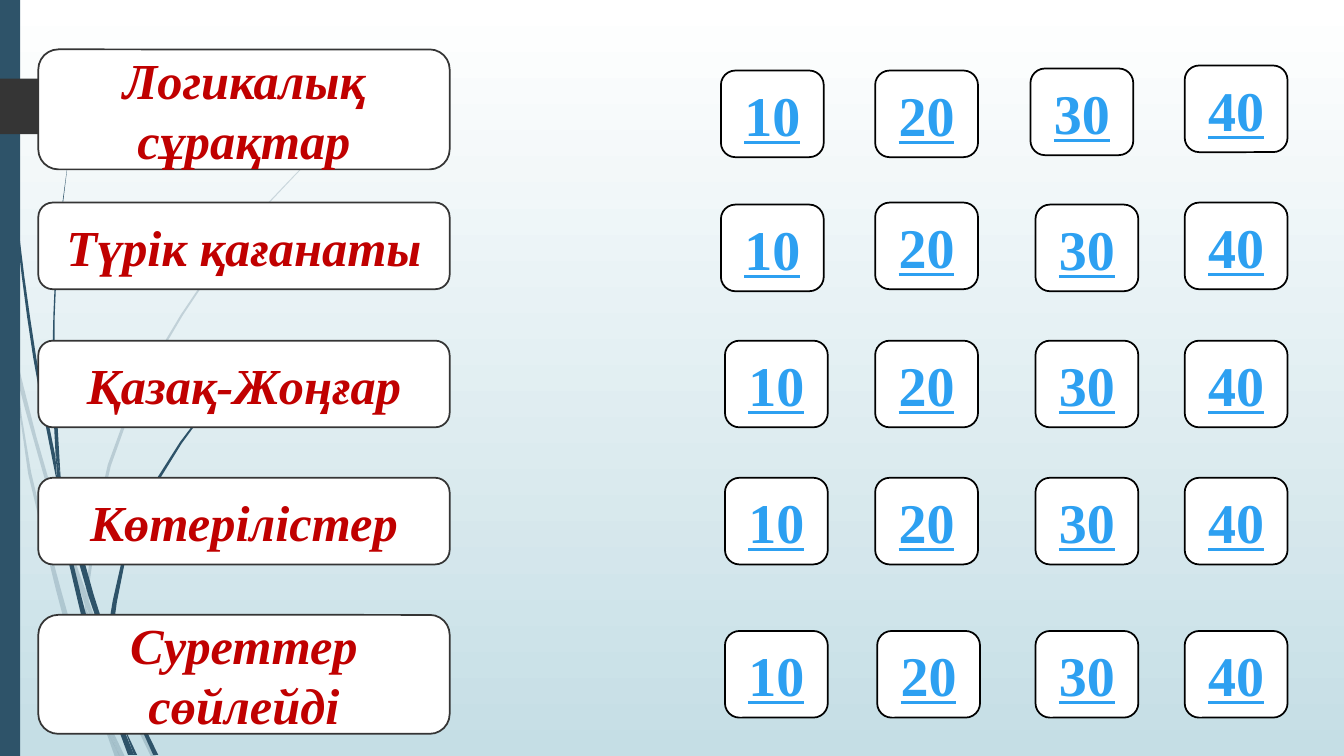
from math import dist

from lxml.etree import SubElement
from pptx import Presentation
from pptx.dml.color import RGBColor
from pptx.enum.shapes import MSO_SHAPE as Preset
from pptx.enum.text import MSO_ANCHOR, PP_ALIGN
from pptx.oxml.ns import qn
from pptx.util import Inches, Pt

COLORS = {
    "white": "FFFFFF", "mist": "C5DEE5", "stem": "2E5369", "charcoal": "353535",
    "topic": "C00000", "score": "2DA0F1", "black": "000000",
}
FONT = "Times New Roman"
WIDTH, HEIGHT = 13.33, 7.5

# Topic, top and height of its box, top of its score tiles
ROWS = [
    ("Логикалық сұрақтар", 0.49, 1.19, 0.7),
    ("Түрік қағанаты", 2.01, 0.86, 2.01),
    ("Қазақ-Жоңғар", 3.38, 0.86, 3.38),
    ("Көтерілістер", 4.74, 0.86, 4.74),
    ("Суреттер сөйлейді", 6.1, 1.18, 6.26),
]
SCORES = [("10", 7.19), ("20", 8.68), ("30", 10.27), ("40", 11.75)]
TILE_NUDGES = {  # (row, column): (right, down)
    (0, 0): (-0.04, 0), (0, 2): (-0.05, -0.02), (0, 3): (0, -0.05),
    (1, 0): (-0.04, 0.02), (1, 2): (0, 0.02), (4, 1): (0.02, 0),
}
TOPIC_LEFT, TOPIC_WIDTH = 0.38, 4.08
TILE_WIDTH, TILE_HEIGHT = 1.02, 0.86

# Each grass blade is an outline of two sides, in inches
PALE_BLADES = [
    ([(0.11, 3.5), (0, 2.82)], [(0, 2.99), (0.11, 3.5)]),
    ([(0.14, 3.45), (0.17, 3.76), (0.58, 5.22), (0.84, 5.99)],
     [(0.85, 5.86), (0.62, 5.2), (0.36, 4.33), (0.14, 3.45)]),
    ([(0.88, 5.96), (0.88, 6.1), (1.23, 6.94), (1.5, 7.51)],
     [(1.55, 7.51), (1.27, 6.92), (0.92, 6.07), (0.88, 5.96)]),
    ([(1.05, 7.11), (1.19, 7.51)], [(1.24, 7.51), (1.05, 7.11)]),
    ([(0.93, 6.83), (0.7, 6.19), (0.31, 4.69), (0.17, 3.76), (0.11, 3.5)],
     [(0.28, 4.7), (0.65, 6.21), (0.92, 6.93), (1.01, 7.14), (0.93, 6.83)]),
    ([(0.84, 5.99), (0.87, 6.46), (0.93, 6.83), (1.05, 7.11)],
     [(1.03, 7.06), (0.91, 6.46), (0.88, 6.1), (0.84, 5.99)]),
    ([(0.88, 5.96), (0.88, 5.84), (1.1, 4.62), (1.6, 3.49), (2.29, 2.45), (3.12, 1.54)],
     [(3.12, 1.53), (2.28, 2.44), (1.58, 3.48), (1.07, 4.61), (0.85, 5.84)]),
    ([(1.01, 7.14), (1.14, 7.51)], [(1.19, 7.51), (1.01, 7.14)]),
    ([(0.88, 6.08), (0.88, 5.96), (0.85, 5.86)], [(0.84, 5.99), (0.88, 6.08)]),
    ([(0.93, 6.83), (1.01, 7.14), (1.19, 7.51)], [(1.05, 7.11), (0.93, 6.83)]),
]
DARK_BLADES = [
    ([(0.03, 0), (0.07, 1.1), (0.17, 2.33), (0.33, 3.55), (0.57, 4.81)],
     [(0.55, 4.53), (0.36, 3.55), (0.19, 2.32), (0.08, 1.09), (0.04, 0)]),
    ([(0.6, 4.72), (0.64, 5.05), (0.88, 5.92), (1.06, 6.45)],
     [(1.06, 6.31), (0.93, 5.9), (0.6, 4.72)]),
    ([(1.1, 6.41), (1.11, 6.56), (1.52, 7.49)],
     [(1.57, 7.49), (1.36, 7.06), (1.1, 6.41)]),
    ([(1.1, 6.91), (0.98, 6.57), (0.72, 5.56), (0.57, 4.77)],
     [(0.68, 5.57), (0.93, 6.59), (1.17, 7.22), (1.1, 6.91)]),
    ([(0.6, 4.72), (0.54, 3.49), (0.58, 2.45), (0.7, 1.41)],
     [(0.56, 2.45), (0.52, 3.49), (0.55, 4.49), (0.6, 4.72)]),
    ([(1.22, 7.19), (1.33, 7.49)], [(1.36, 7.49), (1.22, 7.19)]),
    ([(0.57, 4.77), (0.64, 5.05)], [(0.6, 4.72), (0.55, 4.49)]),
    ([(1.1, 6.41), (1.11, 6.33), (1.25, 5.52), (1.58, 4.76), (2.05, 4.06), (2.61, 3.44)],
     [(2.6, 3.44), (2.04, 4.05), (1.56, 4.74), (1.22, 5.51), (1.06, 6.31)]),
    ([(1.17, 7.22), (1.27, 7.49)], [(1.31, 7.49), (1.17, 7.22)]),
    ([(1.1, 6.91), (1.17, 7.22), (1.3, 7.49)], [(1.33, 7.49), (1.1, 6.91)]),
]
STEPS_PER_INCH = 2.5


def color(name):
    return RGBColor.from_string(COLORS[name])


def paint(shape, fill, line=None):
    shape.shadow.inherit = False
    shape.fill.solid()
    shape.fill.fore_color.rgb = color(fill)
    if line:
        shape.line.color.rgb = color(line)
        shape.line.width = Pt(1.25)
    else:
        shape.line.fill.background()


def smooth(points):
    """Sample a Catmull-Rom curve through the points, more finely on long spans."""
    padded = [points[0], *points, points[-1]]
    curve = [points[0]]
    for a, b, c, d in zip(padded, padded[1:], padded[2:], padded[3:]):
        steps = max(1, round(dist(b, c) * STEPS_PER_INCH))
        for step in range(1, steps + 1):
            t = step / steps
            curve.append(tuple(
                (2 * q + (r - p) * t + (2 * p - 5 * q + 4 * r - s) * t**2
                 + (3 * q - p - 3 * r + s) * t**3) / 2
                for p, q, r, s in zip(a, b, c, d)))
    return curve


def add_blade(shapes, sides, opacity=None):
    outline = [(x * 1000, y * 1000) for side in sides for x, y in smooth(side)]
    builder = shapes.build_freeform(*outline[0], scale=Inches(1) / 1000)
    builder.add_line_segments(outline[1:], close=True)
    blade = builder.convert_to_shape()
    paint(blade, "stem")
    if opacity:
        tint = next(blade.element.spPr.iter(qn("a:srgbClr")))
        SubElement(tint, qn("a:alpha"), val=str(opacity * 1000))


def add_block(shapes, preset, left, top, width, height, fill, line=None):
    block = shapes.add_shape(preset, *map(Inches, (left, top, width, height)))
    paint(block, fill, line)
    return block


def add_card(shapes, text, place, line, size, ink, **style):
    card = add_block(shapes, Preset.ROUNDED_RECTANGLE, *place, "white", line)
    card.text_frame.vertical_anchor = MSO_ANCHOR.MIDDLE
    para = card.text_frame.paragraphs[0]
    para.text = text
    para.alignment = PP_ALIGN.CENTER
    font = para.font
    font.name, font.size, font.bold = FONT, Pt(size), True
    font.color.rgb = color(ink)
    for name, value in style.items():
        setattr(font, name, value)


def main():
    deck = Presentation()
    deck.slide_width, deck.slide_height = Inches(WIDTH), Inches(HEIGHT)
    page = deck.slides.add_slide(deck.slide_layouts[6])
    shapes = page.shapes

    backdrop = page.background.fill
    backdrop.gradient()
    backdrop.gradient_angle = 270
    for stop, name, position in zip(backdrop.gradient_stops, ("white", "mist"), (0, 1)):
        stop.color.rgb = color(name)
        stop.position = position

    for sides in PALE_BLADES:
        add_blade(shapes, sides, opacity=20)
    for sides in DARK_BLADES:
        add_blade(shapes, sides)
    add_block(shapes, Preset.RECTANGLE, 0, 0, 0.2, HEIGHT, "stem")
    add_block(shapes, Preset.PENTAGON, 0, 0.78, 1.74, 0.55, "charcoal")

    for row, (topic, top, height, tile_top) in enumerate(ROWS):
        add_card(shapes, topic, (TOPIC_LEFT, top, TOPIC_WIDTH, height),
                 "charcoal", 36, "topic", italic=True)
        for column, (score, left) in enumerate(SCORES):
            right, down = TILE_NUDGES.get((row, column), (0, 0))
            add_card(shapes, score, (left + right, tile_top + down, TILE_WIDTH, TILE_HEIGHT),
                     "black", 40, "score", underline=True)

    deck.save("out.pptx")


if __name__ == "__main__":
    main()
